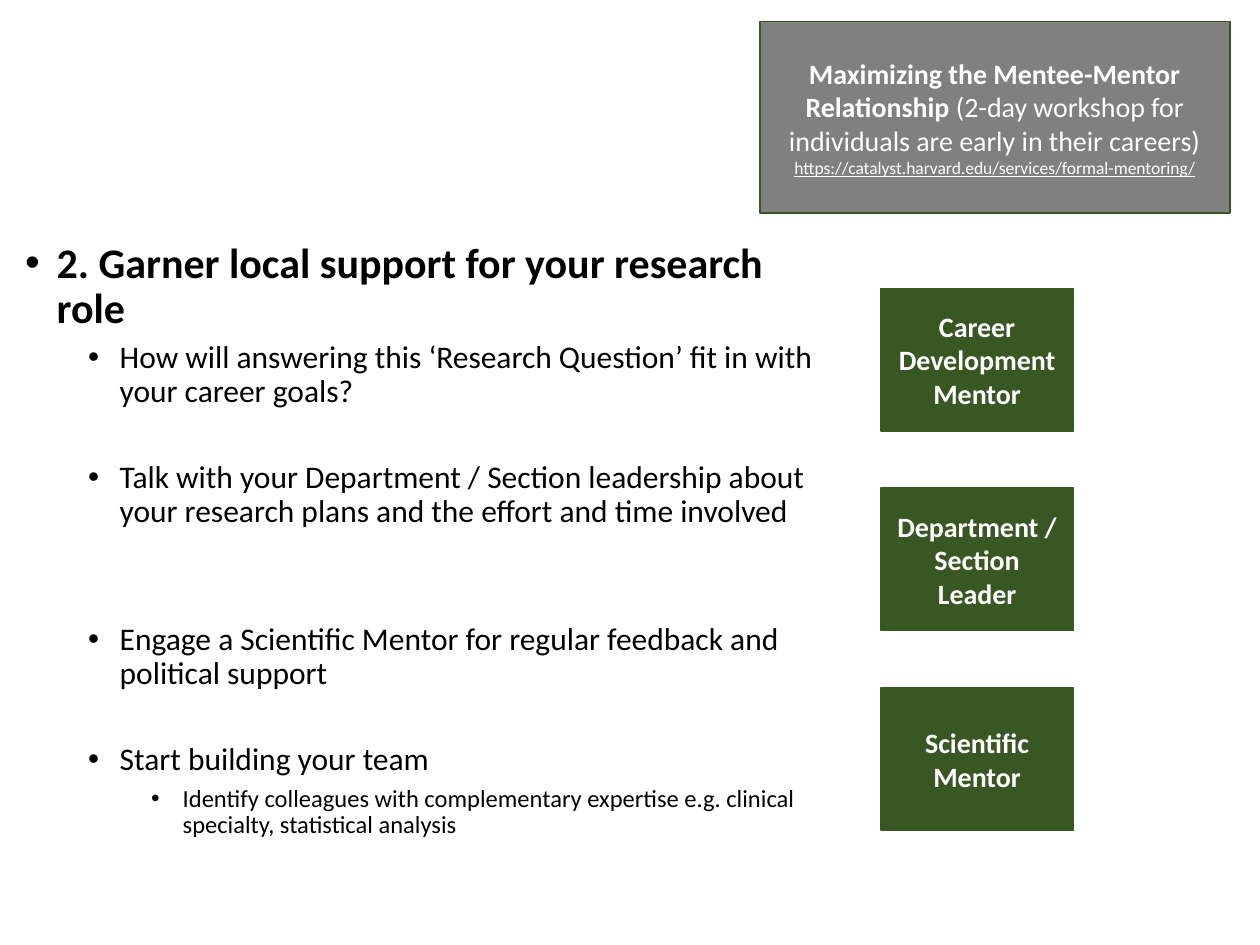
from lxml import etree
from pptx import Presentation
from pptx.dml.color import RGBColor
from pptx.enum.shapes import MSO_SHAPE as Shape
from pptx.enum.text import MSO_ANCHOR as Anchor, MSO_AUTO_SIZE as Fit, PP_ALIGN as Align
from pptx.oxml.ns import qn
from pptx.util import Inches, Pt

GREEN, GRAY, WHITE, BLACK = "385723", "808080", "FFFFFF", "000000"

# level, size, bold, space before, text
POINTS = [
    (0, 24, True, 0, "2. Garner local support for your research role"),
    (1, 18, False, 5, "How will answering this ‘Research Question’ fit in with your career goals?"),
    (1, 18, False, 29.5, "Talk with your Department / Section leadership about your research plans "
                         "and the effort and time involved"),
    (1, 18, False, 54, "Engage a Scientific Mentor for regular feedback and political support"),
    (1, 18, False, 29.5, "Start building your team"),
    (2, 14, False, 5, "Identify colleagues with complementary expertise e.g. clinical specialty, "
                      "statistical analysis"),
]
INDENTS = [0.25, 0.75, 1.25]
MENTORS = ["Career Development Mentor", "Department / Section Leader", "Scientific Mentor"]


def color(code):
    return RGBColor.from_string(code)


def write(para, text, size=16, bold=False, ink=WHITE, line=False):
    run = para.add_run()
    run.text = text
    font = run.font
    font.name, font.size, font.bold = "Calibri", Pt(size), bold
    font.underline = line
    font.color.rgb = color(ink)


def bullet(para, left):
    """Hang a round bullet a quarter inch before the text."""
    props = para._p.get_or_add_pPr()
    props.set("marL", str(Inches(left)))
    props.set("indent", str(Inches(-0.25)))
    etree.SubElement(props, qn("a:buFont")).set("typeface", "Arial")
    etree.SubElement(props, qn("a:buChar")).set("char", "•")


def outline(body, x, y, w, h):
    body.left, body.top, body.width, body.height = map(Inches, (x, y, w, h))
    frame = body.text_frame
    frame.word_wrap, frame.auto_size = True, Fit.NONE
    frame.vertical_anchor = Anchor.TOP
    for i, (level, size, bold, gap, text) in enumerate(POINTS):
        para = frame.add_paragraph() if i else frame.paragraphs[0]
        para.level = level
        para.line_spacing, para.space_before = 0.9, Pt(gap)
        bullet(para, INDENTS[level])
        write(para, text, size=size, bold=bold, ink=BLACK)


def panel(slide, x, y, w, h, fill):
    """Add a filled box and return its centred paragraph."""
    box = slide.shapes.add_shape(Shape.RECTANGLE, *map(Inches, (x, y, w, h)))
    box.shadow.inherit = False
    box.fill.solid()
    box.fill.fore_color.rgb = color(fill)
    box.line.color.rgb = color(GREEN)
    box.line.width = Pt(1)
    frame = box.text_frame
    frame.word_wrap, frame.vertical_anchor = True, Anchor.MIDDLE
    para = frame.paragraphs[0]
    para.alignment = Align.CENTER
    return para


def workshop(slide, x, y, w, h):
    para = panel(slide, x, y, w, h, GRAY)
    write(para, "Maximizing the Mentee-Mentor Relationship ", bold=True)
    write(para, "(2-day workshop for individuals are early in their careers) ")
    write(para, "https://catalyst.harvard.edu/services/formal-mentoring/", size=10, line=True)


def mentors(slide, x, y, w, h):
    """Stack the mentor boxes evenly from top to bottom."""
    tall = 1.13
    step = (h - tall) / (len(MENTORS) - 1)
    for i, name in enumerate(MENTORS):
        write(panel(slide, x, y + i * step, w, tall, GREEN), name, bold=True)


def main():
    deck = Presentation()
    deck.slide_width, deck.slide_height = Inches(10), Inches(7.5)
    slide = deck.slides.add_slide(deck.slide_layouts[1])
    title = slide.shapes.title._element
    title.getparent().remove(title)
    outline(slide.placeholders[1], 0.1, 1.87, 6.64, 4.94)
    mentors(slide, 6.99, 2.29, 1.53, 4.3)
    workshop(slide, 6.03, 0.17, 3.73, 1.52)
    deck.save("out.pptx")


if __name__ == "__main__":
    main()
